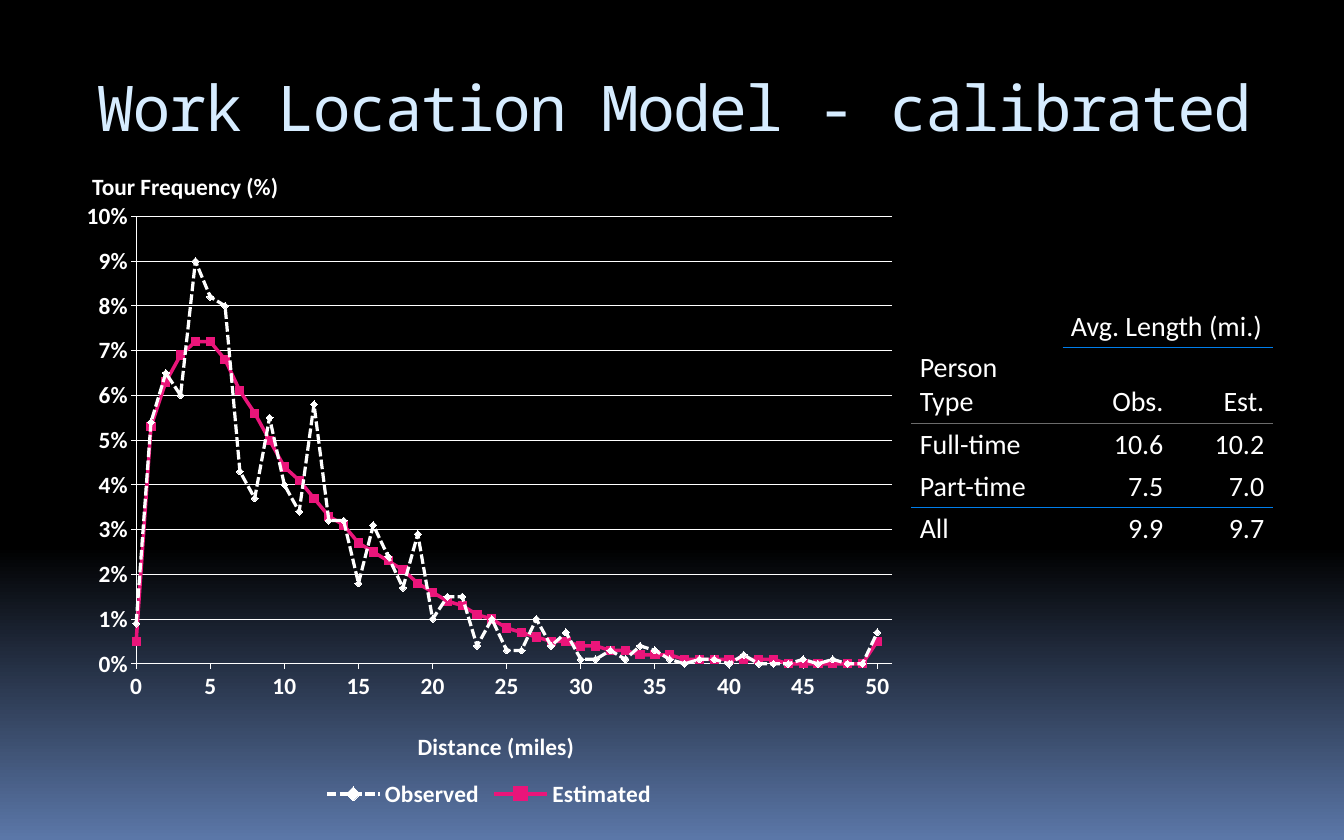
import copy
from dataclasses import dataclass

import pptx
import pptx.chart.data
import pptx.dml.color
import pptx.enum.chart
import pptx.enum.dml
import pptx.enum.text
import pptx.oxml
import pptx.oxml.ns
import pptx.util

SLIDE_WIDTH = pptx.util.Inches(16)
SLIDE_HEIGHT = pptx.util.Inches(10)
WHITE, PINK, BLUE, GREY = "FFFFFF", "EA157A", "007EEB", "6B6B6B"
BODY_FONT = "Calibri"


@dataclass
class Box:
    """Place and size in percent of the slide."""
    left: float
    top: float
    width: float
    height: float

    def lengths(self) -> tuple:
        return across(self.left), down(self.top), across(self.width), down(self.height)


@dataclass
class TextStyle:
    size: float
    color: str = WHITE
    font: str = BODY_FONT
    bold: bool = False


@dataclass
class Curve:
    name: str
    tenths: list  # tour frequency per mile, in tenths of a percent
    color: str
    width: float
    dash: object
    marker: object
    marker_size: int


def across(percent: float) -> int:
    return round(SLIDE_WIDTH * percent / 100)


def down(percent: float) -> int:
    return round(SLIDE_HEIGHT * percent / 100)


def rgb(value: str) -> pptx.dml.color.RGBColor:
    return pptx.dml.color.RGBColor.from_string(value)


def style_font(font, style: TextStyle) -> None:
    font.size = pptx.util.Pt(style.size)
    font.name = style.font
    font.bold = style.bold
    font.color.rgb = rgb(style.color)


def add_run(paragraph, text: str, style: TextStyle):
    run = paragraph.add_run()
    run.text = text
    style_font(run.font, style)
    return run


def add_text(slide, box: Box, text: str, style: TextStyle):
    shape = slide.shapes.add_textbox(*box.lengths())
    shape.text_frame.word_wrap = True
    add_run(shape.text_frame.paragraphs[0], text, style)
    return shape


def set_background(slide) -> None:
    fill = slide.background.fill
    fill.gradient()
    fill.gradient_angle = 270
    stop_list = slide.element.xpath(".//a:gsLst")[0]
    stop_list.append(copy.deepcopy(stop_list[-1]))
    for stop, (position, color) in zip(
            fill.gradient_stops, [(0, "000000"), (0.65, "000000"), (1, "5B77A8")]):
        stop.position = position
        stop.color.rgb = rgb(color)


def set_layout(parent, index: int, **shares) -> None:
    """Place a chart part by shares of the chart's size."""
    for old in parent.findall(pptx.oxml.ns.qn("c:layout")):
        parent.remove(old)
    target = '<c:layoutTarget val="inner"/>' if "w" in shares else ""
    values = "".join(f'<c:{key} val="{share}"/>' for key, share in shares.items())
    parent.insert(index, pptx.oxml.parse_xml(
        f'<c:layout {pptx.oxml.ns.nsdecls("c")}><c:manualLayout>{target}'
        f'<c:xMode val="edge"/><c:yMode val="edge"/>{values}</c:manualLayout></c:layout>'))


def style_line(line, color: str, width: float) -> None:
    line.color.rgb = rgb(color)
    line.width = pptx.util.Pt(width)


def style_axis(axis, maximum: float, major: float, number_format: str, style: TextStyle) -> None:
    axis.minimum_scale, axis.maximum_scale, axis.major_unit = 0, maximum, major
    axis.major_tick_mark = pptx.enum.chart.XL_TICK_MARK.OUTSIDE
    axis.minor_tick_mark = pptx.enum.chart.XL_TICK_MARK.NONE
    axis.tick_labels.number_format = number_format
    axis.tick_labels.number_format_is_linked = False
    style_font(axis.tick_labels.font, style)
    style_line(axis.format.line, WHITE, 0.75)


def add_frequency_chart(slide, box: Box, curves: list) -> None:
    data = pptx.chart.data.XyChartData()
    for curve in curves:
        series = data.add_series(curve.name)
        for mile, tenth in enumerate(curve.tenths):
            series.add_data_point(mile, tenth / 1000)
    chart = slide.shapes.add_chart(
        pptx.enum.chart.XL_CHART_TYPE.XY_SCATTER_SMOOTH, *box.lengths(), data).chart
    label = TextStyle(20, bold=True)
    style_font(chart.font, TextStyle(10))
    chart.has_title = False
    chart.plots[0].vary_by_categories = False

    # Axes
    style_axis(chart.category_axis, 51, 5, "0", label)
    style_axis(chart.value_axis, 0.1, 0.01, "0%", label)
    chart.category_axis.has_major_gridlines = False
    chart.value_axis.has_major_gridlines = True
    style_line(chart.value_axis.major_gridlines.format.line, WHITE, 0.75)
    title = chart.category_axis.axis_title
    add_run(title.text_frame.paragraphs[0], "Distance (miles)", label)
    set_layout(title.element, 1, x=0.41, y=0.86)
    set_layout(chart.element.xpath(".//c:plotArea")[0], 0, x=0.08, y=0.04, w=0.9, h=0.72)

    # Legend
    chart.has_legend = True
    chart.legend.position = pptx.enum.chart.XL_LEGEND_POSITION.BOTTOM
    chart.legend.include_in_layout = False
    style_font(chart.legend.font, label)

    # Curves
    for series, curve in zip(chart.plots[0].series, curves):
        series.smooth = True
        style_line(series.format.line, curve.color, curve.width)
        series.format.line.dash_style = curve.dash
        series.marker.style = curve.marker
        series.marker.size = curve.marker_size
        series.marker.format.fill.solid()
        series.marker.format.fill.fore_color.rgb = rgb(curve.color)
        series.marker.format.line.color.rgb = rgb(curve.color)


def set_border(cell, edge: str, color: str) -> None:
    fill = f'<a:solidFill><a:srgbClr val="{color}"/></a:solidFill>' if color else "<a:noFill/>"
    cell.fill.background()
    properties = cell._tc.get_or_add_tcPr()
    borders = len(properties.xpath("a:lnL|a:lnR|a:lnT|a:lnB"))
    properties.insert(borders, pptx.oxml.parse_xml(
        f'<a:{edge} {pptx.oxml.ns.nsdecls("a")} w="12700">{fill}</a:{edge}>'))


def add_length_table(slide, box: Box, rows: list, widths: list, rules: dict) -> None:
    """Rules give, for a row boundary, the first ruled column and the colour."""
    table = slide.shapes.add_table(len(rows), len(widths), *box.lengths()).table
    table.first_row = table.horz_banding = False
    for column, width in zip(table.columns, widths):
        column.width = across(width)
    for row in table.rows:
        row.height = down(2.1)
    table.cell(0, 0).merge(table.cell(1, 0))
    table.cell(0, 1).merge(table.cell(0, 2))
    for r, row in enumerate(rows):
        for c, text in enumerate(row):
            cell = table.cell(r, c)
            cell.vertical_anchor = pptx.enum.text.MSO_ANCHOR.BOTTOM
            bottom = r + (cell.span_height if cell.is_merge_origin else 1)
            for edge, boundary in (("lnL", None), ("lnR", None), ("lnT", r), ("lnB", bottom)):
                first, color = rules.get(boundary, (0, ""))
                set_border(cell, edge, color if c >= first else "")
            if text:
                paragraph = cell.text_frame.paragraphs[0]
                if r and c:
                    paragraph.alignment = pptx.enum.text.PP_ALIGN.RIGHT
                add_run(paragraph, text, TextStyle(24))


CURVES = [
    Curve("Observed", [
        9, 54, 65, 60, 90, 82, 80, 43, 37, 55, 40, 34, 58, 32, 32, 18, 31, 24, 17, 29, 10, 15, 15, 4, 10, 3,
        3, 10, 4, 7, 1, 1, 3, 1, 4, 3, 1, 0, 1, 1, 0, 2, 0, 0, 0, 1, 0, 1, 0, 0, 7],
        WHITE, 2.75, pptx.enum.dml.MSO_LINE.SQUARE_DOT, pptx.enum.chart.XL_MARKER_STYLE.DIAMOND, 6),
    Curve("Estimated", [
        5, 53, 63, 69, 72, 72, 68, 61, 56, 50, 44, 41, 37, 33, 31, 27, 25, 23, 21, 18, 16, 14, 13, 11, 10, 8,
        7, 6, 5, 5, 4, 4, 3, 3, 2, 2, 2, 1, 1, 1, 1, 1, 1, 1, 0, 0, 0, 0, 0, 0, 5],
        PINK, 3, pptx.enum.dml.MSO_LINE.SOLID, pptx.enum.chart.XL_MARKER_STYLE.SQUARE, 7),
]
LENGTHS = [["Person Type", "Avg. Length (mi.)", ""], ["", "Obs.", "Est."],
           ["Full-time", "10.6", "10.2"], ["Part-time", "7.5", "7.0"], ["All", "9.9", "9.7"]]


def main() -> None:
    presentation = pptx.Presentation()
    presentation.slide_width, presentation.slide_height = SLIDE_WIDTH, SLIDE_HEIGHT
    slide = presentation.slides.add_slide(presentation.slide_layouts[6])
    set_background(slide)

    # Title
    title = add_text(slide, Box(6.25, 7.5, 88.75, 13.3), "Work Location Model - calibrated",
                     TextStyle(54, "D6ECFF", "Noto Sans Mono"))
    title.text_frame.margin_left = title.text_frame.margin_right = across(0.94)
    title.text_frame.margin_top = title.text_frame.margin_bottom = down(0.7)
    title.text_frame.paragraphs[0].runs[0].font._element.set("spc", "-150")

    # Table, chart and the label above its value axis
    add_length_table(slide, Box(67.81, 36.4, 26.88, 25), LENGTHS, [11.25, 8.13, 7.5],
                     {1: (1, BLUE), 2: (0, GREY), 4: (0, BLUE)})
    add_frequency_chart(slide, Box(5.13, 22.8, 62.5, 74), CURVES)
    add_text(slide, Box(6.25, 20, 16.63, 4.4), "Tour Frequency (%)", TextStyle(20, bold=True))
    presentation.save("out.pptx")


if __name__ == "__main__":
    main()
